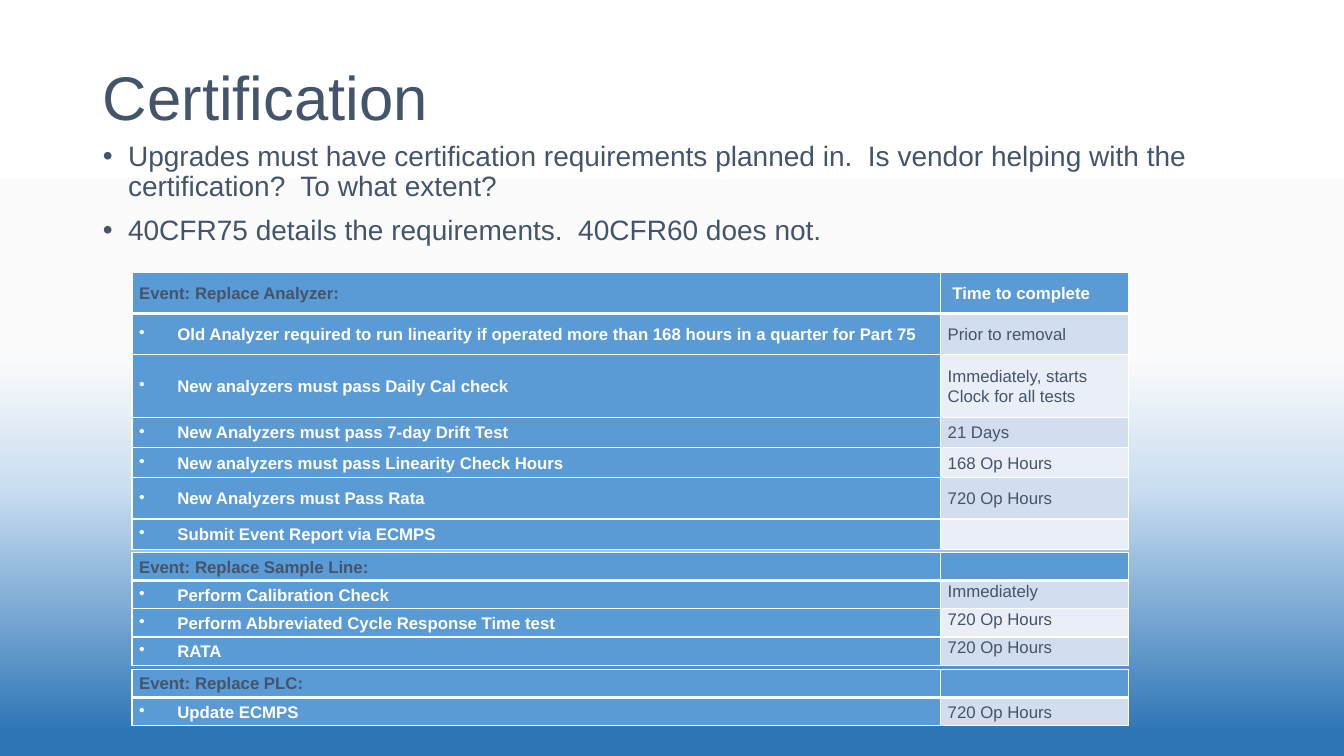
from lxml import etree
from pptx import Presentation
from pptx.dml.color import RGBColor
from pptx.enum.text import MSO_ANCHOR, MSO_AUTO_SIZE, PP_ALIGN
from pptx.oxml.ns import qn
from pptx.util import Inches, Pt

MIDDLE, TOP = MSO_ANCHOR.MIDDLE, MSO_ANCHOR.TOP
LEFT, NO_FIT = PP_ALIGN.LEFT, MSO_AUTO_SIZE.NONE

FONT = "Arial"
COLORS = {
    "text": "44546A", "white": "FFFFFF", "blue": "5B9BD5",
    "band1": "D2DEEF", "band2": "EAEFF7",
}
GRADIENT = [(0, "FFFFFF", 100), (47, "FBFBFB", 100),
            (64, "CCDFF1", 100), (97, "2E75B6", 78)]
MARGIN, CONTENT_W = 0.92, 11.5
TABLE_LEFT, COLUMNS = 1.31, (8.02, 1.86)
BULLETS = [
    "Upgrades must have certification requirements planned in.  "
    "Is vendor helping with the certification?  To what extent?",
    "40CFR75 details the requirements.  40CFR60 does not.",
]
EVENTS = [
    (2.7, (0.41, 0.41, 0.62, 0.3, 0.3, 0.41, 0.3), MIDDLE, [
        ("Event: Replace Analyzer:", "\u00a0Time to complete"),
        ("Old Analyzer required to run linearity if operated more than "
         "168 hours in a quarter for Part 75", "Prior to removal"),
        ("New analyzers must pass Daily Cal check",
         "Immediately, starts Clock for all tests"),
        ("New Analyzers must pass 7-day Drift Test", "21 Days"),
        ("New analyzers must pass Linearity Check Hours", "168 Op Hours"),
        ("New Analyzers must Pass Rata", "720 Op Hours"),
        ("Submit Event Report via ECMPS", ""),
    ]),
    (5.48, (0.28,) * 4, TOP, [
        ("Event: Replace Sample Line:", ""),
        ("Perform Calibration Check", "Immediately"),
        ("Perform Abbreviated Cycle Response Time test", "720 Op Hours"),
        ("RATA", "720 Op Hours"),
    ]),
    (6.64, (0.28,) * 2, MIDDLE, [
        ("Event: Replace PLC:", ""),
        ("Update ECMPS", "720 Op Hours"),
    ]),
]


def rgb(name):
    """Return the palette colour called name."""
    return RGBColor.from_string(COLORS[name])


def format_paragraph(p, size, color="text", bold=False, spacing=0.9):
    """Set the font, alignment and line spacing of a paragraph."""
    p.font.name, p.font.size, p.font.bold = FONT, Pt(size), bold
    p.font.color.rgb = rgb(color)
    p.alignment, p.line_spacing = LEFT, spacing


def add_bullet(p, indent):
    """Give a paragraph a round bullet with a hanging indent."""
    pPr = p._p.get_or_add_pPr()
    pPr.set("marL", str(Inches(indent)))
    pPr.set("indent", str(-Inches(indent)))
    bullet = etree.Element(qn("a:buChar"), char="•")
    defaults = pPr.find(qn("a:defRPr"))
    defaults.addprevious(bullet)


def set_background(s):
    """Fill the slide background with the vertical gradient."""
    fill = s.background.fill
    fill.gradient()
    fill.gradient_angle = 270
    stops = s.background._cSld.find(".//" + qn("a:gsLst"))
    for stop in list(stops):
        stops.remove(stop)
    for position, color, alpha in GRADIENT:
        stop = etree.SubElement(stops, qn("a:gs"), pos=str(position * 1000))
        clr = etree.SubElement(stop, qn("a:srgbClr"), val=color)
        if alpha < 100:
            etree.SubElement(clr, qn("a:alpha"), val=str(alpha * 1000))


def place(sp, top, height, anchor):
    """Move a placeholder to the content column and return its frame."""
    sp.left, sp.top = Inches(MARGIN), Inches(top)
    sp.width, sp.height = Inches(CONTENT_W), Inches(height)
    tf = sp.text_frame
    tf.auto_size, tf.word_wrap, tf.vertical_anchor = NO_FIT, True, anchor
    return tf


def add_title(s, text):
    """Write the slide title."""
    tf = place(s.shapes.title, 0.4, 1.2, MIDDLE)
    tf.text = text
    format_paragraph(tf.paragraphs[0], 44)


def add_body(s, lines):
    """Write the bulleted list in the body placeholder."""
    tf = place(s.placeholders[1], 1.36, 5.85, TOP)
    tf.text = "\n".join(lines)
    for p in tf.paragraphs:
        format_paragraph(p, 20)
        p.space_before = Pt(10)
        add_bullet(p, 0.25)


def set_borders(cell, bottom):
    """Draw white cell borders, with the given bottom width."""
    tcPr = cell._tc.get_or_add_tcPr()
    widths = {"lnL": 1, "lnR": 1, "lnT": 1, "lnB": bottom}
    for i, (side, width) in enumerate(widths.items()):
        ln = etree.Element(qn(f"a:{side}"), w=str(Pt(width)))
        fill = etree.SubElement(ln, qn("a:solidFill"))
        etree.SubElement(fill, qn("a:srgbClr"), val=COLORS["white"])
        tcPr.insert(i, ln)


def fill_cell(cell, text, row, col, anchor):
    """Write and format one cell according to its row and column."""
    header, label = row == 0, col == 0
    cell.margin_left = cell.margin_right = Inches(0.07)
    cell.margin_top = cell.margin_bottom = 0
    cell.vertical_anchor = MIDDLE if header or label else anchor
    cell.fill.solid()
    band = "band1" if row % 2 else "band2"
    cell.fill.fore_color.rgb = rgb("blue" if header or label else band)
    set_borders(cell, 3 if header else 1)
    p = cell.text_frame.paragraphs[0]
    if text:
        p.text = text
    else:
        p._p.get_or_add_endParaRPr().set("sz", "1200")
    format_paragraph(p, 12, "white" if header != label else "text",
                     header or label, 1.07)
    if label and not header:
        add_bullet(p, 0.38)


def add_event_table(s, top, heights, anchor, rows):
    """Add the table of one replacement event."""
    table = s.shapes.add_table(
        len(rows), len(COLUMNS), Inches(TABLE_LEFT), Inches(top),
        Inches(sum(COLUMNS)), Inches(sum(heights))).table
    for column, width in zip(table.columns, COLUMNS):
        column.width = Inches(width)
    for i, (height, texts) in enumerate(zip(heights, rows)):
        table.rows[i].height = Inches(height)
        for j, text in enumerate(texts):
            fill_cell(table.cell(i, j), text, i, j, anchor)


def main():
    """Build the certification slide."""
    prs = Presentation()
    prs.slide_width, prs.slide_height = Inches(13.33), Inches(7.5)
    s = prs.slides.add_slide(prs.slide_layouts[1])
    set_background(s)
    add_title(s, "Certification")
    add_body(s, BULLETS)
    for event in EVENTS:
        add_event_table(s, *event)
    prs.save("out.pptx")


if __name__ == "__main__":
    main()
